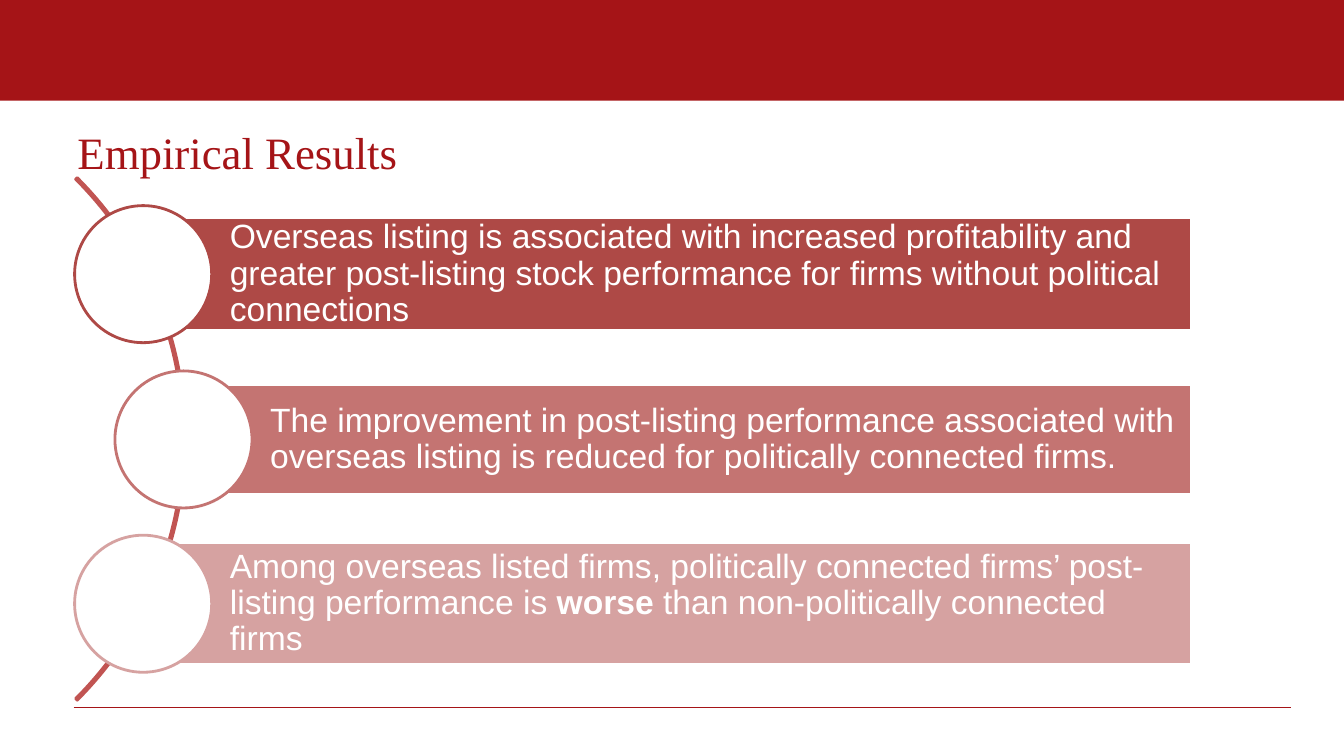
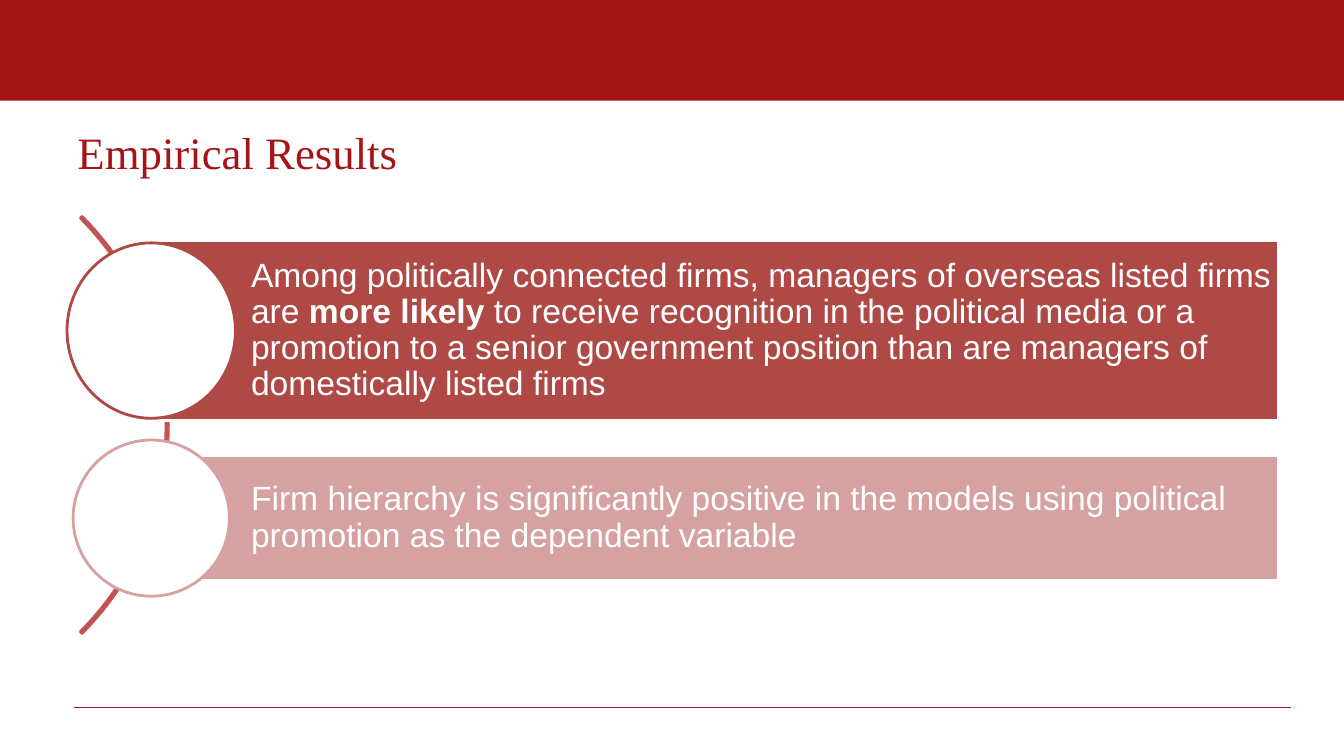
"""Build two slides of empirical results as rows of circles and bars on an arc."""
from dataclasses import dataclass
from typing import Any

from lxml import etree
from pptx import Presentation
from pptx import util as u
from pptx.dml import color
from pptx.enum import shapes, text
from pptx.oxml import ns


@dataclass(frozen=True)
class Theme:
    """Colours, fonts and sizes shared by the slides."""
    red: str = "A51417"
    arc: str = "C15452"
    dark: str = "AE4946"
    mid: str = "C47472"
    light: str = "D6A2A1"
    white: str = "FFFFFF"
    title_font: str = "Times New Roman"
    body_font: str = "Arial"
    title_size: float = 32
    body_size: float = 24
    outline: float = 2
    rule: float = 0.75


@dataclass(frozen=True)
class Box:
    """A rectangle in inches."""
    left: float
    top: float
    width: float
    height: float

    def emu(self) -> list[int]:
        """Return the four lengths for python-pptx."""
        return [u.Inches(v) for v in (self.left, self.top, self.width, self.height)]

    @classmethod
    def centred(cls, x: float, y: float, width: float, height: float) -> "Box":
        """Return a box around a centre point."""
        return cls(x - width / 2, y - height / 2, width, height)


@dataclass(frozen=True)
class Row:
    """A circle with a bar that starts at its centre."""
    x: float
    y: float
    bar_height: float
    circle: tuple[float, float]
    colour: str
    runs: tuple[tuple[str, bool], ...]


@dataclass(frozen=True)
class Page:
    """The content of one slide."""
    title: str
    arc: Box
    thickness: float
    right: float
    inset: float
    rows: tuple[Row, ...]


T = Theme()
WIDTH, HEIGHT = 13.33, 7.5
PAD = 0.07
ROUND = (1.36, 1.36)

PAGES = (
    Page("Empirical Results", Box(-5.49, 0.69, 7.33, 7.33), 0.003, 11.82, 0.86, (
        Row(1.42, 2.72, 1.12, ROUND, T.dark, (
            ("Overseas listing is associated with increased profitability and greater "
             "post-listing stock performance for firms without political connections", False),)),
        Row(1.82, 4.36, 1.09, ROUND, T.mid, (
            ("The improvement in post-listing performance associated with overseas "
             "listing is reduced for politically connected firms.", False),)),
        Row(1.42, 5.99, 1.21, ROUND, T.light, (
            ("Among overseas listed firms, politically connected firms’ post-listing "
             "performance is ", False),
            ("worse", True),
            (" than non-politically connected firms", False))),
    )),
    Page("Empirical Results", Box(-4.18, 1.29, 5.85, 5.85), 0.004, 12.68, 0.99, (
        Row(1.5, 3.28, 1.79, (1.67, 1.74), T.dark, (
            ("Among politically connected firms, managers of overseas listed firms are ", False),
            ("more likely ", True),
            ("to receive recognition in the political media or a promotion to a senior "
             "government position than are managers of domestically listed firms", False))),
        Row(1.5, 5.14, 1.24, (1.55, 1.55), T.light, (
            ("Firm hierarchy is significantly positive in the models using political "
             "promotion as the dependent variable", False),)),
    )),
)


def apply(obj: Any, formats: dict[str, Any]) -> None:
    """Set each attribute in a dict of format values."""
    for name, value in formats.items():
        setattr(obj, name, value)


def rgb(value: str) -> color.RGBColor:
    """Turn a hex string into a colour."""
    return color.RGBColor.from_string(value)


def add_shape(s: Any, kind: Any, box: Box, fill: str | None, line: str | None) -> Any:
    """Draw a preset shape with a flat fill and outline."""
    sp = s.shapes.add_shape(kind, *box.emu())
    sp.shadow.inherit = False
    if fill:
        sp.fill.solid()
        sp.fill.fore_color.rgb = rgb(fill)
    else:
        sp.fill.background()
    if line:
        sp.line.color.rgb = rgb(line)
        sp.line.width = u.Pt(T.outline)
    else:
        sp.line.fill.background()
    return sp


def add_text(sp: Any, runs: tuple[tuple[str, bool], ...], font: str, size: float,
             colour: str, spacing: float, insets: dict[str, int]) -> None:
    """Write one left-aligned paragraph of runs into a shape."""
    tf = sp.text_frame
    apply(tf, {"word_wrap": True, "vertical_anchor": text.MSO_ANCHOR.MIDDLE, **insets})
    p = tf.paragraphs[0]
    apply(p, {"alignment": text.PP_ALIGN.LEFT, "line_spacing": spacing})
    for words, bold in runs:
        r = p.add_run()
        r.text = words
        apply(r.font, {"name": font, "size": u.Pt(size), "bold": bold})
        r.font.color.rgb = rgb(colour)


def add_frame(s: Any, title: str) -> None:
    """Draw the top band, the footer rule and the title."""
    add_shape(s, shapes.MSO_SHAPE.RECTANGLE, Box(0, 0, WIDTH, 1), T.red, None)
    rule = s.shapes.add_connector(shapes.MSO_CONNECTOR.STRAIGHT, u.Inches(0.73),
                                  u.Inches(7.02), u.Inches(12.8), u.Inches(7.02))
    rule.line.color.rgb = rgb(T.red)
    rule.line.width = u.Pt(T.rule)
    etree.SubElement(rule._element.spPr, ns.qn("a:effectLst"))
    tb = s.shapes.add_textbox(*Box(0.67, 1.17, 12, 0.66).emu())
    add_text(tb, ((title, False),), T.title_font, T.title_size, T.red, 1.0, {})


def add_row(s: Any, row: Row, right: float, inset: float) -> None:
    """Draw a bar with its text, then the circle over its left end."""
    box = Box(row.x, row.y - row.bar_height / 2, right - row.x, row.bar_height)
    bar = add_shape(s, shapes.MSO_SHAPE.RECTANGLE, box, row.colour, T.white)
    insets = {f"margin_{side}": u.Inches(PAD) for side in ("top", "right", "bottom")}
    insets["margin_left"] = u.Inches(inset)
    add_text(bar, row.runs, T.body_font, T.body_size, T.white, 0.9, insets)
    add_shape(s, shapes.MSO_SHAPE.OVAL, Box.centred(row.x, row.y, *row.circle),
              T.white, row.colour)


def add_page(prs: Any, page: Page) -> None:
    """Add one slide with its arc and rows."""
    s = prs.slides.add_slide(prs.slide_layouts[6])
    add_frame(s, page.title)
    arc = add_shape(s, shapes.MSO_SHAPE.BLOCK_ARC, page.arc, None, T.arc)
    for i, value in enumerate((189, 27, page.thickness)):
        arc.adjustments[i] = value
    for row in page.rows:
        add_row(s, row, page.right, page.inset)


def main() -> None:
    """Build and save the presentation."""
    prs = Presentation()
    apply(prs, {"slide_width": u.Inches(WIDTH), "slide_height": u.Inches(HEIGHT)})
    for page in PAGES:
        add_page(prs, page)
    prs.save("out.pptx")


if __name__ == "__main__":
    main()
